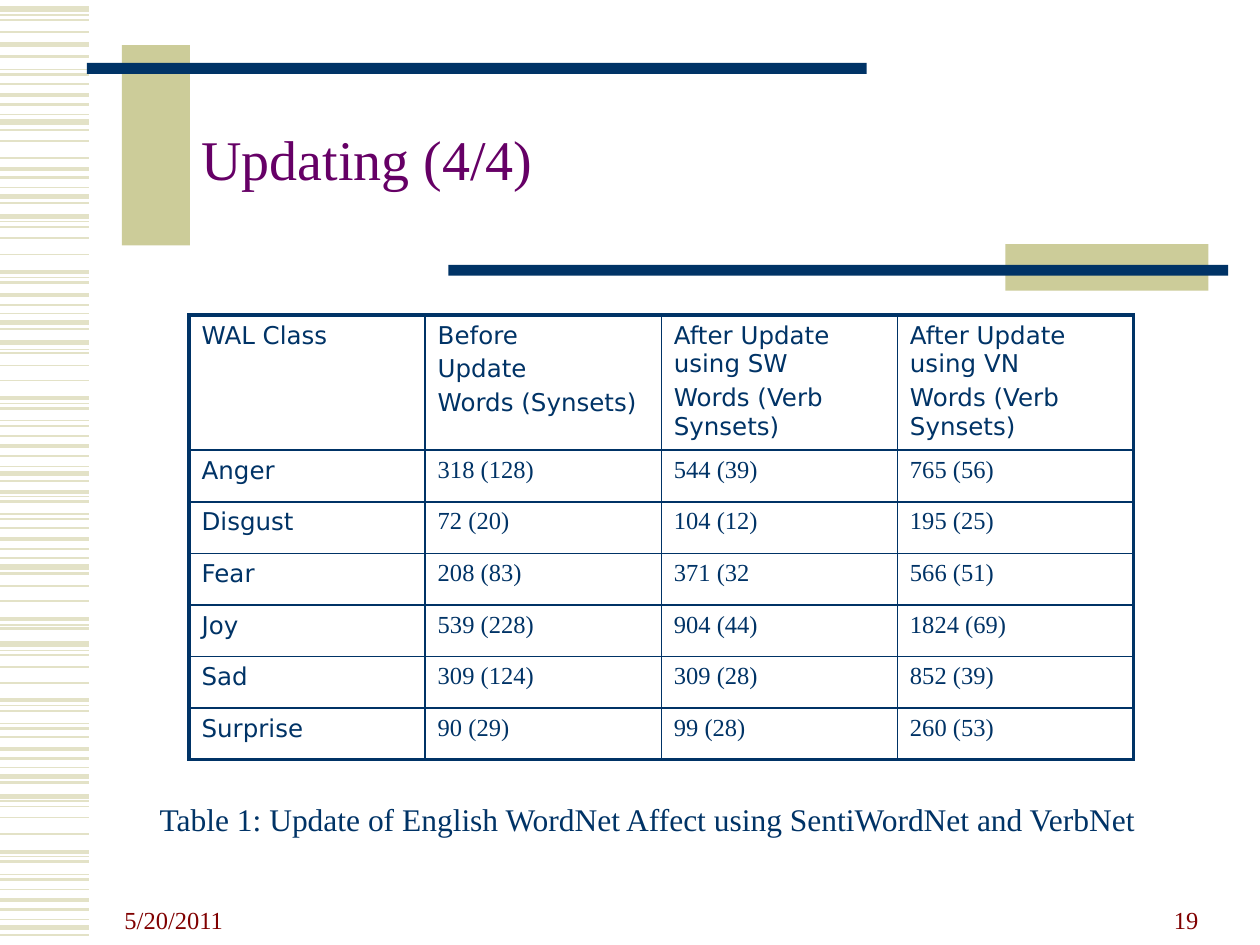
from dataclasses import dataclass

from lxml.etree import SubElement
from pptx import Presentation
from pptx.dml.color import RGBColor
from pptx.enum.shapes import MSO_CONNECTOR, MSO_SHAPE
from pptx.enum.text import MSO_ANCHOR, PP_ALIGN
from pptx.oxml.ns import qn
from pptx.slide import Slide
from pptx.table import _Cell
from pptx.text.text import _Paragraph
from pptx.util import Cm, Pt

COLORS = {
    "stripe": "E3E2C7",
    "khaki": "CCCC99",
    "navy": "003366",
    "purple": "660066",
    "maroon": "800000",
}
SERIF = "Times New Roman"
SANS = "DejaVu Sans"
STRIPE_LENGTH = 1.8

STRIPES = {
    0.75: [0.3, 1.4, 2.31, 3.78, 4.47, 5.59, 6.32, 7.04, 8.13, 8.48, 9.4, 10.01,
           10.36, 11.25, 12.6, 13.11, 14.22, 14.58, 15.47, 16.15, 17.27, 17.63,
           18.54],
    1: [0.41, 0.64, 1.7, 2.84, 3.18, 4.57, 4.8, 5.13, 7.11, 7.37, 7.67, 8.79,
        10.64, 11.81, 12.12, 13.21, 13.44, 13.77, 14.86, 16.26, 16.48, 16.81,
        17.93],
    1.5: [1.14, 1.5, 2.11, 2.62, 3.58, 4.09, 5.69, 6.15, 6.63, 8.23, 8.59, 9.19,
          9.7, 10.11, 10.46, 11.07, 11.56, 12.67, 14.33, 14.68, 15.29, 15.77,
          17.37, 17.73, 18.34, 18.85],
    2.25: [1.91, 3.4, 5.49, 5.94, 8.03, 8.99, 9.91, 10.87, 12.47, 14.12, 15.09,
           17.17, 18.14],
    3: [0.18, 0.89, 2.46, 3.96, 4.37, 6.5, 6.91, 9.55, 11.43, 12.98, 15.65,
        16.05, 18.69],
}

TABLE_ROWS = [
    ["WAL Class", "Before\nUpdate\nWords (Synsets)",
     "After Update using SW\nWords (Verb Synsets)",
     "After Update using VN\nWords (Verb Synsets)"],
    ["Anger", "318 (128)", "544 (39)", "765 (56)"],
    ["Disgust", "72 (20)", "104 (12)", "195 (25)"],
    ["Fear", "208 (83)", "371 (32", "566 (51)"],
    ["Joy", "539 (228)", "904 (44)", "1824 (69)"],
    ["Sad", "309 (124)", "309 (28)", "852 (39)"],
    ["Surprise", "90 (29)", "99 (28)", "260 (53)"],
]
HEADER_HEIGHT = 2.72
ROW_HEIGHT = 1.04
COLUMN_WIDTH = 4.76


@dataclass
class Bar:
    left: float
    top: float
    width: float
    height: float
    color: str


@dataclass
class Label:
    text: str
    left: float
    top: float
    width: float
    height: float
    size: float
    color: str
    anchor: MSO_ANCHOR = MSO_ANCHOR.TOP
    align: PP_ALIGN = PP_ALIGN.LEFT
    line_spacing: float = 1.0
    space_before: float = 0
    hanging: float = 0


BARS = [
    Bar(2.46, 0.91, 1.37, 4.04, "khaki"),
    Bar(1.75, 1.27, 15.72, 0.22, "navy"),
    Bar(20.27, 4.92, 4.09, 0.94, "khaki"),
    Bar(9.04, 5.34, 15.72, 0.22, "navy"),
]

LABELS = [
    Label("19", 18.31, 17.7, 6.1, 1.27, 14, "maroon",
          MSO_ANCHOR.BOTTOM, PP_ALIGN.RIGHT),
    Label("Updating (4/4)", 3.81, 1.7, 20.5, 3.18, 32, "purple",
          MSO_ANCHOR.MIDDLE, line_spacing=0.85),
    Label("Table 1: Update of English WordNet Affect using SentiWordNet and VerbNet",
          2.97, 16.08, 20.96, 0.84, 18, "navy",
          line_spacing=0.9, space_before=3.6, hanging=0.95),
    Label("5/20/2011", 2.26, 17.7, 5.28, 1.27, 14, "maroon", MSO_ANCHOR.BOTTOM),
]


def rgb(color: str) -> RGBColor:
    return RGBColor.from_string(COLORS[color])


def set_font(paragraph: _Paragraph, name: str, size: float, color: str) -> None:
    paragraph.font.name = name
    paragraph.font.size = Pt(size)
    paragraph.font.color.rgb = rgb(color)


def draw_stripe(slide: Slide, y: float, weight: float) -> None:
    stripe = slide.shapes.add_connector(
        MSO_CONNECTOR.STRAIGHT, Cm(0), Cm(y), Cm(STRIPE_LENGTH), Cm(y))
    stripe.line.color.rgb = rgb("stripe")
    stripe.line.width = Pt(weight)
    SubElement(stripe._element.spPr, qn("a:effectLst"))


def draw_bar(slide: Slide, bar: Bar) -> None:
    block = slide.shapes.add_shape(
        MSO_SHAPE.RECTANGLE, Cm(bar.left), Cm(bar.top), Cm(bar.width), Cm(bar.height))
    block.shadow.inherit = False
    block.fill.solid()
    block.fill.fore_color.rgb = rgb(bar.color)
    block.line.fill.background()


def draw_label(slide: Slide, label: Label) -> None:
    frame = slide.shapes.add_textbox(
        Cm(label.left), Cm(label.top), Cm(label.width), Cm(label.height)).text_frame
    frame.word_wrap = True
    frame.vertical_anchor = label.anchor
    paragraph = frame.paragraphs[0]
    paragraph.text = label.text
    paragraph.alignment = label.align
    paragraph.line_spacing = label.line_spacing
    paragraph.space_before = Pt(label.space_before)
    if label.hanging:
        properties = paragraph._p.get_or_add_pPr()
        properties.set("marL", str(Cm(label.hanging)))
        properties.set("indent", str(-Cm(label.hanging)))
    set_font(paragraph, SERIF, label.size, label.color)


def set_border(cell: _Cell, side: str, weight: float) -> None:
    border = SubElement(cell._tc.get_or_add_tcPr(), qn(f"a:ln{side}"), w=str(Pt(weight)))
    fill = SubElement(border, qn("a:solidFill"))
    SubElement(fill, qn("a:srgbClr"), val=COLORS["navy"])


def draw_table(slide: Slide, rows: list[list[str]]) -> None:
    last_row, last_column = len(rows) - 1, len(rows[0]) - 1
    table = slide.shapes.add_table(
        len(rows), len(rows[0]), Cm(3.81), Cm(6.35), Cm(COLUMN_WIDTH * len(rows[0])),
        Cm(HEADER_HEIGHT + ROW_HEIGHT * last_row)).table
    table.first_row = False
    table.horz_banding = False
    for column in table.columns:
        column.width = Cm(COLUMN_WIDTH)
    for r, values in enumerate(rows):
        table.rows[r].height = Cm(ROW_HEIGHT if r else HEADER_HEIGHT)
        for c, value in enumerate(values):
            cell = table.cell(r, c)
            cell.text = value
            for paragraph in cell.text_frame.paragraphs:
                paragraph.space_before = Pt(2.8)
                set_font(paragraph, SERIF if r and c else SANS, 14, "navy")
            outer_sides = {"L": c == 0, "R": c == last_column,
                           "T": r == 0, "B": r == last_row}
            for side, is_outer in outer_sides.items():
                set_border(cell, side, 2.25 if is_outer else 1)
            cell.fill.background()


def main() -> None:
    presentation = Presentation()
    presentation.slide_width = Cm(25.4)
    presentation.slide_height = Cm(19.05)
    slide = presentation.slides.add_slide(presentation.slide_layouts[6])
    for weight, positions in STRIPES.items():
        for y in positions:
            draw_stripe(slide, y, weight)
    for bar in BARS:
        draw_bar(slide, bar)
    for label in LABELS:
        draw_label(slide, label)
    draw_table(slide, TABLE_ROWS)
    presentation.save("out.pptx")


if __name__ == "__main__":
    main()
